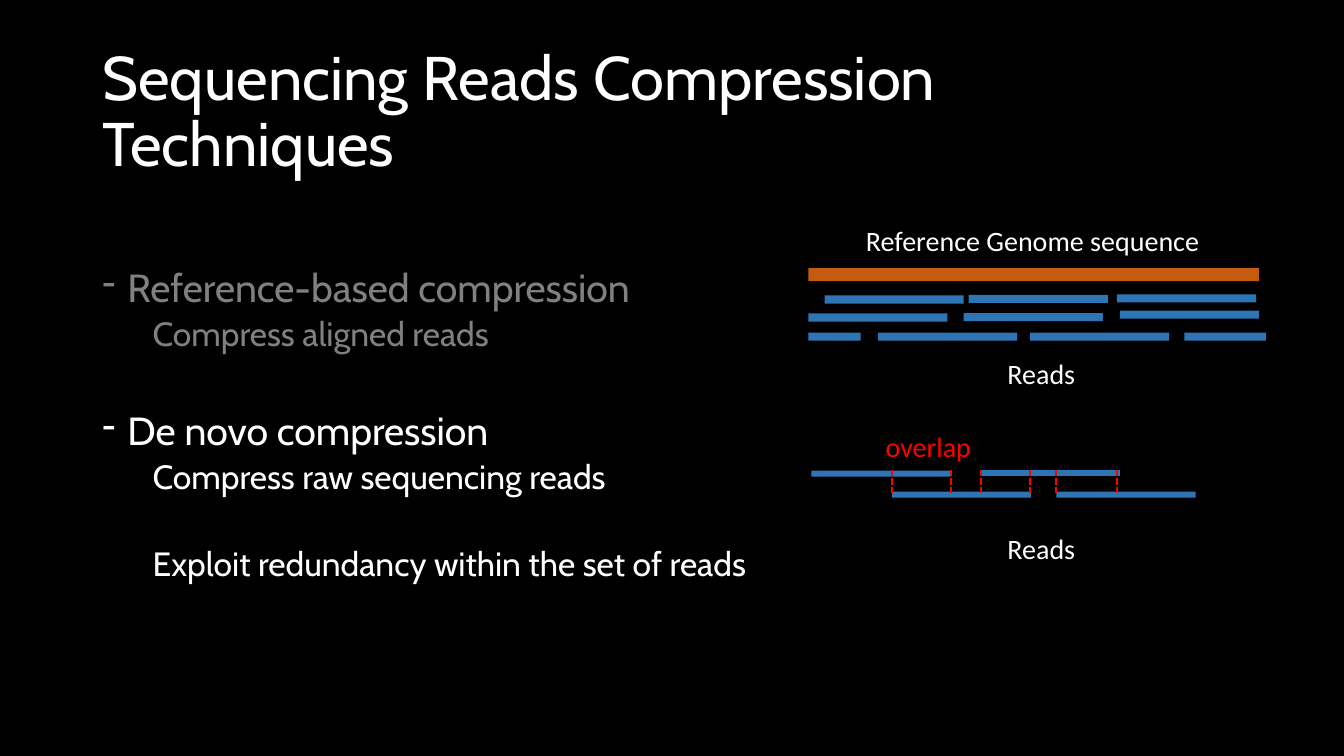
from pptx import Presentation
from pptx.dml.color import RGBColor
from pptx.enum.dml import MSO_LINE
from pptx.enum.shapes import MSO_CONNECTOR, MSO_SHAPE
from pptx.enum.text import MSO_ANCHOR, PP_ALIGN
from pptx.oxml.ns import qn
from pptx.util import Pt
from lxml import etree

RECT = MSO_SHAPE.RECTANGLE
LINE = MSO_CONNECTOR.STRAIGHT
DASH = MSO_LINE.SQUARE_DOT
MIDDLE = MSO_ANCHOR.MIDDLE
LEFT = PP_ALIGN.LEFT
CENTER = PP_ALIGN.CENTER

COLORS = {
    "black": "000000",
    "white": "FFFFFF",
    "gray": "808080",
    "orange": "C55A11",
    "blue": "2E75B6",
    "red": "FF0000",
}


def color(name):
    return RGBColor.from_string(COLORS[name])


def write(para, text, size=20, font="Calibri", tint="white", align=LEFT,
          space=0, before=0, margin=0, indent=0, bullet=None, level=0):
    run = para.add_run()
    run.text = text
    run.font.size = Pt(size)
    run.font.name = font
    run.font.color.rgb = color(tint)
    para.alignment = align
    para.level = level
    para.space_before = Pt(before)
    if space:
        para.line_spacing = space
    props = para._p.get_or_add_pPr()
    props.set("marL", str(Pt(margin)))
    props.set("indent", str(Pt(indent)))
    if bullet:
        etree.SubElement(props, qn("a:buChar")).set("char", bullet)


class Deck:
    head = "Cabin"
    space = 0.9
    read = 99.4

    def __init__(self, wide, high):
        self.show = Presentation()
        self.show.slide_width = Pt(wide)
        self.show.slide_height = Pt(high)
        self.slide = self.show.slides.add_slide(self.show.slide_layouts[5])
        fill = self.slide.background.fill
        fill.solid()
        fill.fore_color.rgb = color("black")

    def title(self, text, x, y, w, h):
        box = self.slide.shapes.title
        box.left, box.top, box.width, box.height = map(Pt, (x, y, w, h))
        box.text_frame.vertical_anchor = MIDDLE
        write(box.text_frame.paragraphs[0], text, size=44, font=self.head,
              space=self.space)

    def box(self, x, y, w, h, wrap=True):
        frame = self.slide.shapes.add_textbox(*map(Pt, (x, y, w, h))).text_frame
        frame.word_wrap = wrap
        return frame

    def outline(self, items, x, y, w, h):
        frame = self.box(x, y, w, h)
        for i, (text, level, tint, before) in enumerate(items):
            para = frame.paragraphs[0] if i == 0 else frame.add_paragraph()
            form = (dict(size=24, margin=36) if level else
                    dict(size=28, margin=18, indent=-18, bullet="-"))
            write(para, text, font=self.head, tint=tint, space=self.space,
                  before=before, level=level, **form)

    def label(self, text, mid, y, w, tint="white"):
        frame = self.box(mid - w / 2, y, w, 31.5, wrap=False)
        write(frame.paragraphs[0], text, tint=tint, align=CENTER)

    def bar(self, x, y, w=read, h=5.8, tint="blue"):
        shape = self.slide.shapes.add_shape(RECT, *map(Pt, (x, y, w, h)))
        shape.shadow.inherit = False
        shape.fill.solid()
        shape.fill.fore_color.rgb = color(tint)
        shape.line.fill.background()

    def dash(self, x, top, end):
        line = self.slide.shapes.add_connector(LINE, *map(Pt, (x, top, x, end)))
        line.line.color.rgb = color("red")
        line.line.width = Pt(1.5)
        line.line.dash_style = DASH
        etree.SubElement(line._element.spPr, qn("a:effectLst"))


def main():
    deck = Deck(960, 540)
    deck.title("Sequencing Reads Compression Techniques", 66, 28.8, 828, 104.4)
    deck.outline([
        ("Reference-based compression", 0, "gray", 0),
        ("Compress aligned reads", 1, "gray", 5),
        ("De novo compression", 0, "white", 41),
        ("Compress raw sequencing reads", 1, "white", 5),
        ("Exploit redundancy within the set of reads", 1, "white", 36),
    ], 66, 188, 828, 298)

    deck.label("Reference Genome sequence", 737.6, 156.2, 255)
    deck.bar(577.4, 191.5, 321.8, 9.4, "orange")
    for x, y in [(589, 211), (691.9, 210.6), (797.8, 210.2),
                 (577.4, 223.9), (688.3, 223.6), (799.9, 221.8),
                 (627.1, 237.6), (735.8, 237.6)]:
        deck.bar(x, y)
    for x, w in [(577.4, 37.4), (846, 58.3)]:
        deck.bar(x, 237.6, w)
    deck.label("Reads", 743.8, 251.3, 63.4)

    for x, y in [(579.6, 336.2), (637.2, 351.2), (700.6, 335.6), (754.6, 351.2)]:
        deck.bar(x, y, h=4.3)
    for x in (637.2, 679, 700.6, 736, 754.6, 798):
        deck.dash(x, 335.6, 353.5)
    deck.label("Reads", 743.8, 375.8, 63.4)
    deck.label("overlap", 663.1, 303.1, 76.3, "red")
    deck.show.save("out.pptx")


if __name__ == "__main__":
    main()
